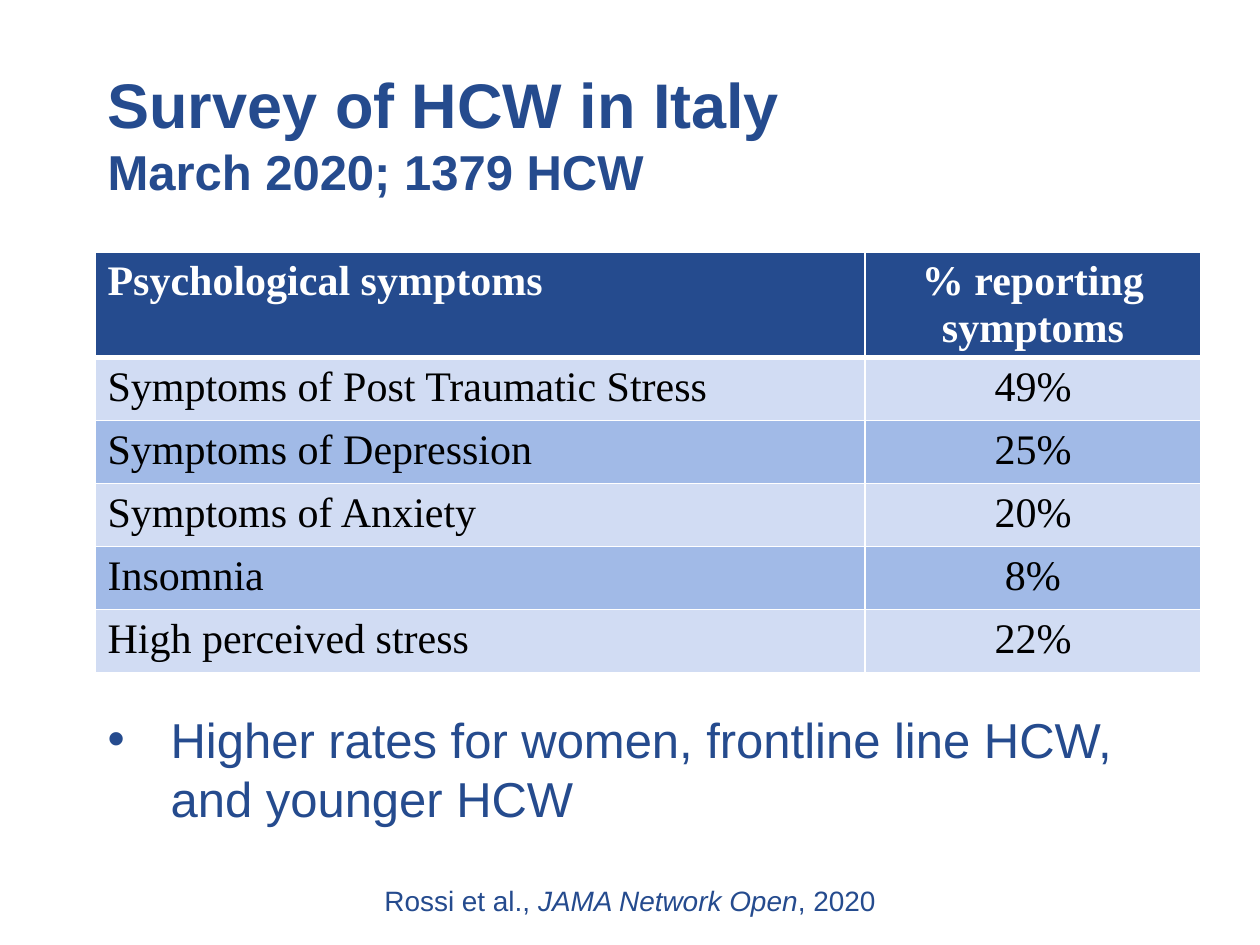
import pptx
import pptx.dml.color
import pptx.enum.text
import pptx.oxml.ns
import pptx.util
from lxml import etree

RGBColor = pptx.dml.color.RGBColor
NAVY = RGBColor(0x25, 0x4B, 0x8E)
PALE = RGBColor(0xD1, 0xDC, 0xF3)
SKY = RGBColor(0xA1, 0xBA, 0xE7)
WHITE = RGBColor(0xFF, 0xFF, 0xFF)
BLACK = RGBColor(0, 0, 0)

PX_PER_INCH = 126
CENTER = pptx.enum.text.PP_ALIGN.CENTER
LEFT = pptx.enum.text.PP_ALIGN.LEFT
HEADER = ("Psychological symptoms", "% reporting symptoms")
SYMPTOMS = (
    ("Symptoms of Post Traumatic Stress", "49%"),
    ("Symptoms of Depression", "25%"),
    ("Symptoms of Anxiety", "20%"),
    ("Insomnia", "8%"),
    ("High perceived stress", "22%"),
)


def px(length):
    """Turn pixels into EMU."""
    return pptx.util.Emu(round(length * 914400 / PX_PER_INCH))


def add_span(para, text, color=NAVY, **formats):
    """Append a formatted run to a paragraph."""
    span = para.add_run()
    span.text = text
    values = {"name": "Arial", **formats}
    values["size"] = pptx.util.Pt(values["size"])
    for name, value in values.items():
        setattr(span.font, name, value)
    span.font.color.rgb = color


def place(box, left, top, width, height, anchor):
    """Position a text shape and return its first paragraph."""
    box.left, box.top, box.width, box.height = map(px, (left, top, width, height))
    frame = box.text_frame
    settings = {
        "word_wrap": True,
        "auto_size": pptx.enum.text.MSO_AUTO_SIZE.NONE,
        "vertical_anchor": anchor,
    }
    for name, value in settings.items():
        setattr(frame, name, value)
    return frame.paragraphs[0]


def add_child(parent, tag, **attributes):
    """Append a DrawingML element."""
    return etree.SubElement(parent, pptx.oxml.ns.qn(tag), **attributes)


def fill_title(page):
    """Write the two-line title."""
    para = place(page.shapes.title, 95, 54, 1071, 158,
                 pptx.enum.text.MSO_ANCHOR.MIDDLE)
    para.alignment = LEFT
    add_span(para, "Survey of HCW in Italy", size=36, bold=True)
    para.add_line_break()
    add_span(para, "March 2020; 1379 HCW", size=28, bold=True)


def fill_body(page):
    """Write the bulleted finding."""
    para = place(page.placeholders[1], 95, 703, 1106, 183,
                 pptx.enum.text.MSO_ANCHOR.TOP)
    properties = para._p.get_or_add_pPr()
    properties.set("marL", str(px(63)))
    properties.set("indent", str(px(-63)))
    add_child(properties, "a:buFont", typeface="Arial")
    add_child(properties, "a:buChar", char="•")
    para.space_before = pptx.util.Pt(0)
    add_span(para, "Higher rates for women, frontline line HCW, and younger HCW",
             size=28)


def add_citation(page):
    """Add the centred source line."""
    box = page.shapes.add_textbox(0, 0, 0, 0)
    para = place(box, 0, 877, 1260, 47, pptx.enum.text.MSO_ANCHOR.TOP)
    para.alignment = CENTER
    for text, italic in (("Rossi et al., ", False), ("JAMA Network Open", True),
                         (", 2020", False)):
        add_span(para, text, size=16, italic=italic)


def add_border(cell, side, points):
    """Draw a white line on one side of a cell."""
    line = add_child(cell._tc.get_or_add_tcPr(), "a:ln" + side,
                     w=str(pptx.util.Pt(points)))
    fill = add_child(line, "a:solidFill")
    add_child(fill, "a:srgbClr", val=str(WHITE))


def fill_cell(cell, text, row, column):
    """Write and colour a table cell according to its position."""
    heading = row == 0
    widths = {"L": 1, "R": 1, "T": 3 if row == 1 else 1, "B": 3 if heading else 1}
    for side, points in widths.items():
        add_border(cell, side, points)
    cell.fill.solid()
    cell.fill.fore_color.rgb = NAVY if heading else (SKY, PALE)[row % 2]
    para = cell.text_frame.paragraphs[0]
    para.alignment = (LEFT, CENTER)[column]
    add_span(para, text, WHITE if heading else BLACK,
             name="Times New Roman", size=24, bold=heading)


def add_symptom_table(page):
    """Add the table of reported symptoms."""
    rows = (HEADER, *SYMPTOMS)
    table = page.shapes.add_table(len(rows), len(HEADER), px(95), px(252),
                                  px(1106), px(420)).table
    for column, width in zip(table.columns, (770, 336)):
        column.width = px(width)
    for row, texts in enumerate(rows):
        table.rows[row].height = px(63 if row else 105)
        for column, text in enumerate(texts):
            fill_cell(table.cell(row, column), text, row, column)


def main():
    """Build and save the slide."""
    deck = pptx.Presentation()
    deck.slide_width, deck.slide_height = px(1260), px(945)
    page = deck.slides.add_slide(deck.slide_layouts[1])
    fill_title(page)
    add_symptom_table(page)
    fill_body(page)
    add_citation(page)
    deck.save("out.pptx")


if __name__ == "__main__":
    main()
